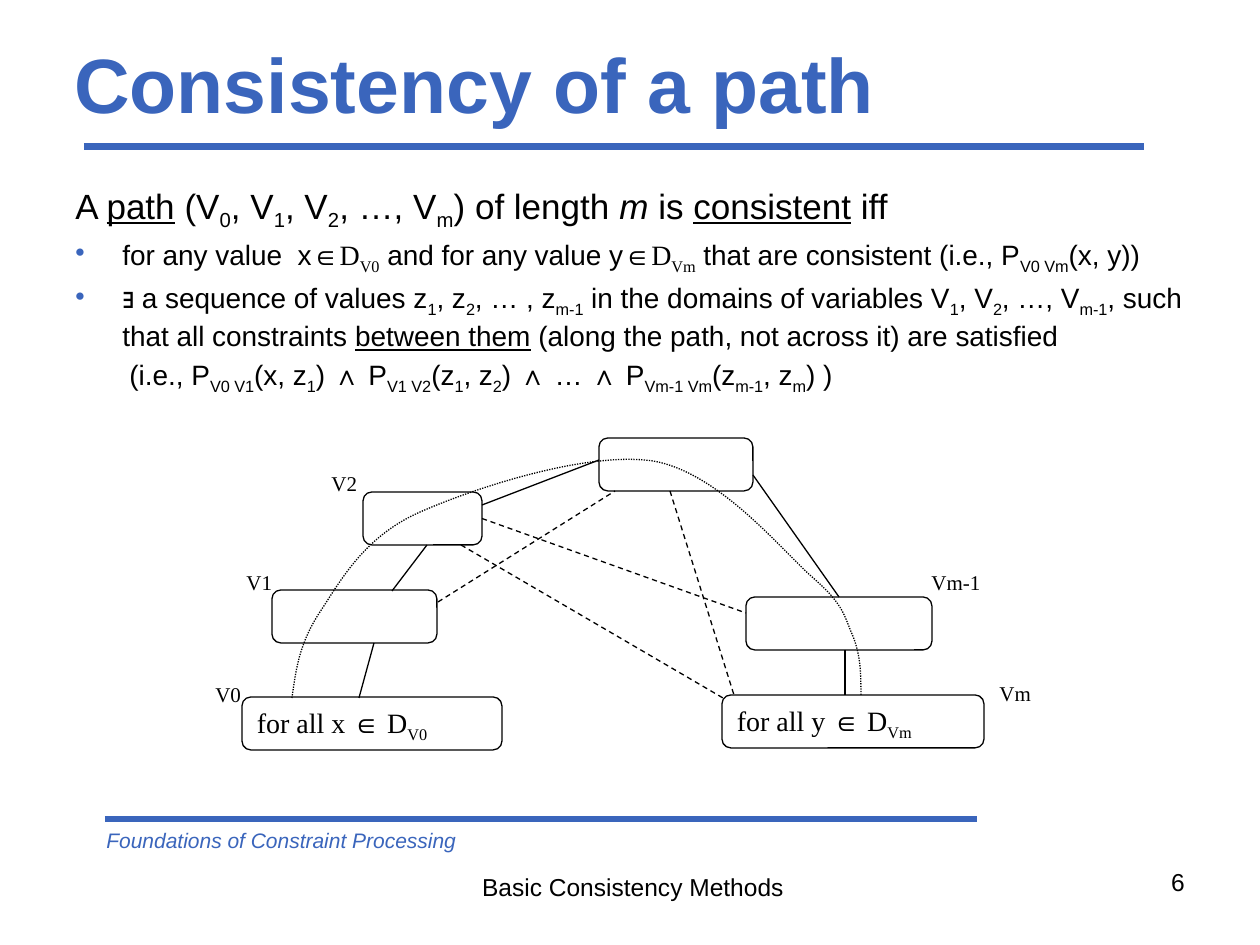
from dataclasses import dataclass

from lxml import etree
from pptx import Presentation
from pptx.dml.color import RGBColor
from pptx.enum.dml import MSO_LINE
from pptx.enum.shapes import MSO_CONNECTOR, MSO_SHAPE
from pptx.enum.text import MSO_ANCHOR, PP_ALIGN
from pptx.oxml.ns import qn
from pptx.util import Pt

STRAIGHT = MSO_CONNECTOR.STRAIGHT
ROUND = MSO_SHAPE.ROUNDED_RECTANGLE
DASH, DOT = MSO_LINE.DASH, MSO_LINE.ROUND_DOT
TOP, MIDDLE = MSO_ANCHOR.TOP, MSO_ANCHOR.MIDDLE
LEFT, CENTER, RIGHT = PP_ALIGN.LEFT, PP_ALIGN.CENTER, PP_ALIGN.RIGHT
SCALE = 914400 / 126


@dataclass(frozen=True)
class Theme:
    blue: RGBColor = RGBColor(0x3A, 0x65, 0xBC)
    black: RGBColor = RGBColor(0, 0, 0)
    white: RGBColor = RGBColor(255, 255, 255)
    sans: str = "Arial"
    serif: str = "Times New Roman"
    title: int = 44
    lead: int = 20
    body: int = 16
    foot: int = 14
    small: int = 12
    rule: int = 4
    thin: float = 0.75


THEME = Theme()

LEAD = [("A ", ""), ("path", "u"), (" (V", ""), ("0", "s"), (", V", ""), ("1", "s"),
        (", V", ""), ("2", "s"), (", …, V", ""), ("m", "s"), (") of length ", ""),
        ("m ", "i"), ("is ", ""), ("consistent", "u"), (" iff", "")]
PAIR = [("for any value  x∈", ""), ("D", "t"), ("V0", "ts"),
        (" and for any value y∈", ""), ("D", "t"), ("Vm", "ts"),
        (" that are consistent (i.e., P", ""), ("V0 Vm", "s"), ("(x, y))", "")]
CHAIN = [("∃ a sequence of values z", ""), ("1", "s"), (", z", ""), ("2", "s"),
         (", … , z", ""), ("m-1", "s"), (" in the domains of variables V", ""),
         ("1", "s"), (", V", ""), ("2", "s"), (", …, V", ""), ("m-1", "s"),
         (", such that all constraints ", ""), ("between them", "u"),
         (" (along the path, not across it) are satisfied", "")]
PROOF = [("(i.e., P", ""), ("V0 V1", "s"), ("(x, z", ""), ("1", "s"), (") ∧ P", ""),
         ("V1 V2", "s"), ("(z", ""), ("1", "s"), (", z", ""), ("2", "s"),
         (") ∧ … ∧ P", ""), ("Vm-1 Vm", "s"), ("(z", ""), ("m-1", "s"),
         (", z", ""), ("m", "s"), (") )", "")]

NODES = {
    "V0": (242, 697, 260, 53),
    "V1": (272, 590, 165, 53),
    "V2": (363, 492, 119, 53),
    "peak": (599, 438, 154, 53),
    "Vm-1": (746, 597, 186, 53),
    "Vm": (722, 695, 262, 53),
}
TEXTS = {
    "V0": [("for all x ", "t"), ("∈", ""), (" D", "t"), ("V0", "ts")],
    "Vm": [("for all y ", "t"), ("∈", ""), (" D", "t"), ("Vm", "ts")],
}
LABELS = [("V0", 203, 675), ("V1", 234, 563), ("V2", 319, 464),
          ("Vm-1", 919, 563), ("Vm", 987, 674)]
EDGES = [
    ((359, 698), (374, 643), None),
    ((392, 591), (427, 545), None),
    ((482, 505), (599, 460), None),
    ((753, 475), ("Vm-1", 0), None),
    ((845, 650), (845, 695), None),
    ((438, 602), (615, 491), DASH),
    (("V2", 3), (746, 613), DASH),
    ((461, 545), (723, 698), DASH),
    ((670, 491), (734, 695), DASH),
]
CURVE = [(292, 698), (296, 670), (299, 644), (320, 612), (340, 582), (363, 538),
         (418, 513), (474, 488), (587, 451), (653, 461), (718, 472), (779, 547),
         (811, 576), (845, 605), (844, 616), (853, 636), (861, 656), (861, 675),
         (861, 695)]


def px(*nums):
    return [round(n * SCALE) for n in nums]


def add_runs(para, runs, size, color=THEME.black):
    for text, flags in runs:
        run = para.add_run()
        run.text = text
        font = run.font
        font.size = Pt(size)
        font.name = THEME.serif if "t" in flags else THEME.sans
        font.color.rgb = color
        font.bold = "b" in flags
        font.italic = "i" in flags
        font.underline = "u" in flags
        if "s" in flags:
            run._r.get_or_add_rPr().set("baseline", "-25000")


def add_box(slide, area, runs, size, color=THEME.black, align=LEFT, anchor=TOP):
    frame = slide.shapes.add_textbox(*px(*area)).text_frame
    frame.word_wrap = True
    frame.vertical_anchor = anchor
    para = frame.paragraphs[0]
    para.alignment = align
    add_runs(para, runs, size, color)
    return frame


def set_indent(para, left, hang=0, mark=None):
    props = para._p.get_or_add_pPr()
    props.set("marL", str(px(left)[0]))
    props.set("indent", str(px(-hang)[0]))
    if mark:
        tint = etree.SubElement(props, qn("a:buClr"))
        etree.SubElement(tint, qn("a:srgbClr")).set("val", str(THEME.blue))
        etree.SubElement(props, qn("a:buChar")).set("char", mark)


def add_body(slide):
    frame = add_box(slide, (63, 178, 1134, 620), LEAD, THEME.lead)
    set_indent(frame.paragraphs[0], 47, 47)
    for runs, left, hang, mark in [(PAIR, 47, 47, "•"), (CHAIN, 47, 47, "•"),
                                   (PROOF, 54, 0, None)]:
        para = frame.add_paragraph()
        set_indent(para, left, hang, mark)
        para.space_before = Pt(3)
        add_runs(para, runs, THEME.body)


def add_node(slide, area, runs):
    node = slide.shapes.add_shape(ROUND, *px(*area))
    node.shadow.inherit = False
    node.fill.solid()
    node.fill.fore_color.rgb = THEME.white
    set_line(node.line)
    frame = node.text_frame
    frame.vertical_anchor = TOP
    para = frame.paragraphs[0]
    para.alignment = LEFT
    add_runs(para, runs, THEME.body)
    return node


def set_line(line, color=THEME.black, width=THEME.thin, dash=None):
    line.color.rgb = color
    line.width = Pt(width)
    if dash:
        line.dash_style = dash


def add_line(slide, start, end, **style):
    line = slide.shapes.add_connector(STRAIGHT, *px(*start, *end))
    etree.SubElement(line._element.spPr, qn("a:effectLst"))
    set_line(line.line, **style)
    return line


def add_edge(slide, nodes, start, end, dash):
    ends = [(0, 0) if spot[0] in nodes else spot for spot in (start, end)]
    edge = add_line(slide, *ends, dash=dash)
    for spot, join in ((start, edge.begin_connect), (end, edge.end_connect)):
        if spot[0] in nodes:
            join(nodes[spot[0]], spot[1])


def add_curve(slide, points):
    first, *rest = [px(*point) for point in points]
    form = slide.shapes.build_freeform(*first)
    form.add_line_segments(rest, close=False)
    curve = form.convert_to_shape()
    curve.shadow.inherit = False
    curve.fill.background()
    set_line(curve.line, dash=DOT)
    track = curve._element.xpath(".//a:path")[0]
    steps = track.findall(qn("a:lnTo"))
    for i in range(0, len(steps), 3):
        bend = etree.SubElement(track, qn("a:cubicBezTo"))
        for step in steps[i:i + 3]:
            bend.append(step[0])
            track.remove(step)


def add_graph(slide):
    nodes = {name: add_node(slide, area, TEXTS.get(name, []))
             for name, area in NODES.items()}
    for name, left, top in LABELS:
        add_box(slide, (left, top, 94, 63), [(name, "t")], THEME.small)
    for edge in EDGES:
        add_edge(slide, nodes, *edge)
    add_curve(slide, CURVE)


def main():
    deck = Presentation()
    deck.slide_width, deck.slide_height = px(1260, 945)
    slide = deck.slides.add_slide(deck.slide_layouts[6])
    for left, right, top in [(84, 1144, 147), (105, 977, 819)]:
        add_line(slide, (left, top), (right, top), color=THEME.blue, width=THEME.rule)
    add_box(slide, (94, 821, 662, 38), [("Foundations of Constraint Processing", "i")],
            THEME.small, THEME.blue)
    add_box(slide, (454, 866, 358, 43), [("Basic Consistency Methods", "")],
            THEME.foot, align=CENTER)
    add_box(slide, (903, 861, 294, 66), [("6", "")], THEME.foot, align=RIGHT)
    add_box(slide, (62, 20, 1133, 126), [("Consistency of a path", "b")],
            THEME.title, THEME.blue, anchor=MIDDLE)
    add_body(slide)
    add_graph(slide)
    deck.save("out.pptx")


if __name__ == "__main__":
    main()
